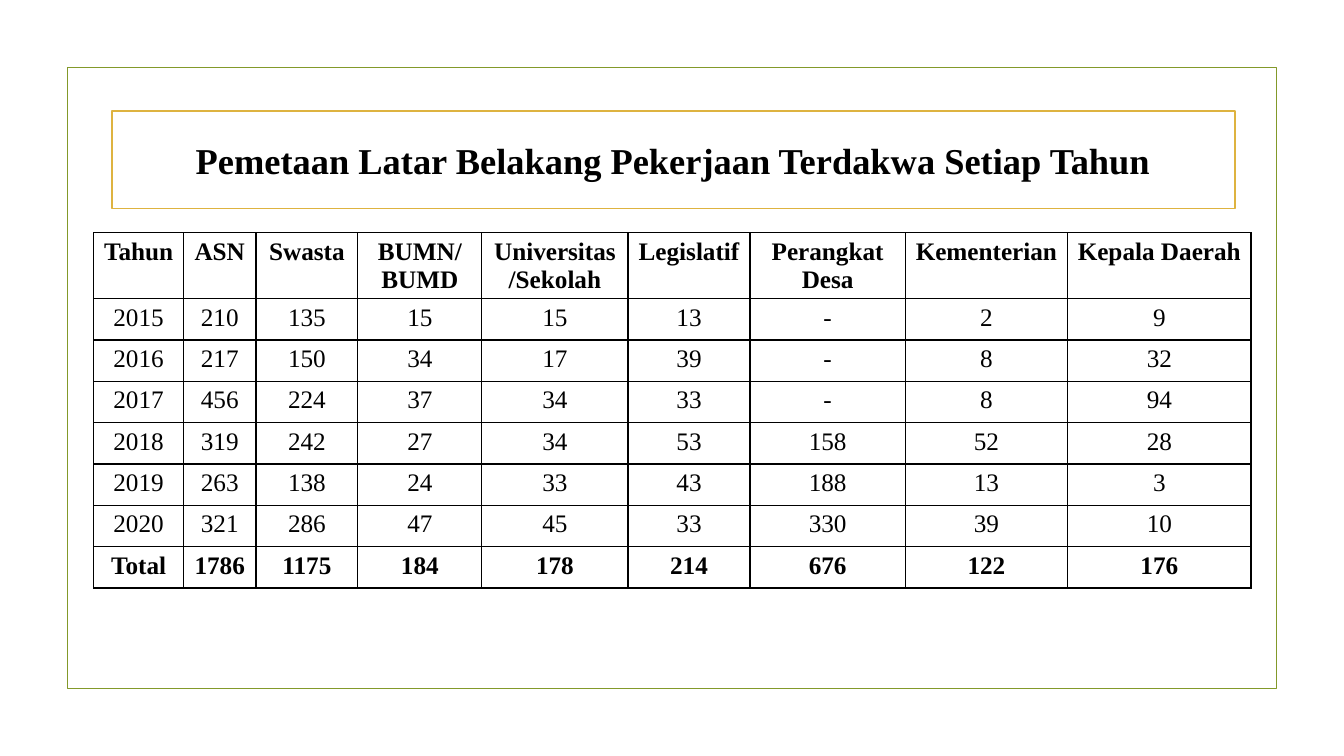
import pptx
import pptx.dml.color
import pptx.enum.shapes
import pptx.enum.text
import pptx.oxml
import pptx.oxml.ns
import pptx.util

TITLE = "Pemetaan Latar Belakang Pekerjaan Terdakwa Setiap Tahun"
HEADERS = ["Tahun", "ASN", "Swasta", "BUMN/BUMD", "Universitas/Sekolah",
           "Legislatif", "Perangkat Desa", "Kementerian", "Kepala Daerah"]
YEARS = [
    (2015, 210, 135, 15, 15, 13, "-", 2, 9),
    (2016, 217, 150, 34, 17, 39, "-", 8, 32),
    (2017, 456, 224, 37, 34, 33, "-", 8, 94),
    (2018, 319, 242, 27, 34, 53, 158, 52, 28),
    (2019, 263, 138, 24, 33, 43, 188, 13, 3),
    (2020, 321, 286, 47, 45, 33, 330, 39, 10),
]
TOTALS = ("Total", 1786, 1175, 184, 178, 214, 676, 122, 176)

COLORS = {"text": "000000", "paper": "FFFFFF", "frame": "83992A", "title": "DEB340"}
FONT = "Times New Roman"
SLIDE_WIDTH, SLIDE_HEIGHT = 13.33, 7.5
FRAME_MARGIN = 0.67
TITLE_AREA = (1.11, 1.1, 11.14, 0.97)
TABLE_LEFT, TABLE_TOP = 0.93, 2.31
COLUMN_WIDTHS = [0.89, 0.72, 1.01, 1.23, 1.45, 1.21, 1.54, 1.61, 1.82]
HEADER_HEIGHT, ROW_HEIGHT = 0.65, 0.41

inches = pptx.util.Inches


def color(name):
    return pptx.dml.color.RGBColor.from_string(COLORS[name])


def outline(shape, name):
    shape.line.color.rgb = color(name)
    shape.line.width = pptx.util.Pt(1.25)


def format_text(paragraph, size, bold):
    paragraph.alignment = pptx.enum.text.PP_ALIGN.CENTER
    paragraph.font.name = FONT
    paragraph.font.size = pptx.util.Pt(size)
    paragraph.font.bold = bold
    paragraph.font.color.rgb = color("text")


def add_cell_borders(cell):
    properties = cell._tc.get_or_add_tcPr()
    for position, side in enumerate(("lnL", "lnR", "lnT", "lnB")):
        border = pptx.oxml.parse_xml(
            f'<a:{side} {pptx.oxml.ns.nsdecls("a")} w="12700"><a:solidFill>'
            f'<a:srgbClr val="{COLORS["text"]}"/></a:solidFill></a:{side}>')
        properties.insert(position, border)


def add_frame(page):
    frame = page.shapes.add_shape(
        pptx.enum.shapes.MSO_SHAPE.RECTANGLE,
        inches(FRAME_MARGIN), inches(FRAME_MARGIN),
        inches(SLIDE_WIDTH - 2 * FRAME_MARGIN), inches(SLIDE_HEIGHT - 2 * FRAME_MARGIN))
    frame.shadow.inherit = False
    frame.fill.background()
    outline(frame, "frame")


def add_title(page):
    title = page.shapes.title
    title.left, title.top, title.width, title.height = map(inches, TITLE_AREA)
    title.fill.solid()
    title.fill.fore_color.rgb = color("paper")
    outline(title, "title")
    title.text_frame.text = TITLE
    title.text_frame.auto_size = pptx.enum.text.MSO_AUTO_SIZE.NONE
    title.text_frame.vertical_anchor = pptx.enum.text.MSO_ANCHOR.MIDDLE
    format_text(title.text_frame.paragraphs[0], 26, True)


def add_defendant_table(page):
    rows = [HEADERS, *YEARS, TOTALS]
    heights = [HEADER_HEIGHT] + [ROW_HEIGHT] * (len(rows) - 1)
    table = page.shapes.add_table(
        len(rows), len(HEADERS), inches(TABLE_LEFT), inches(TABLE_TOP),
        inches(sum(COLUMN_WIDTHS)), inches(sum(heights))).table
    table.horz_banding = False
    for column, width in zip(table.columns, COLUMN_WIDTHS):
        column.width = inches(width)
    for row, height, values in zip(table.rows, heights, rows):
        row.height = inches(height)
        for cell, value in zip(row.cells, values):
            cell.text = str(value)
            cell.fill.solid()
            cell.fill.fore_color.rgb = color("paper")
            add_cell_borders(cell)
            format_text(cell.text_frame.paragraphs[0], 18, values in (HEADERS, TOTALS))


def main():
    deck = pptx.Presentation()
    deck.slide_width, deck.slide_height = inches(SLIDE_WIDTH), inches(SLIDE_HEIGHT)
    page = deck.slides.add_slide(deck.slide_layouts.get_by_name("Title Only"))
    add_frame(page)
    add_title(page)
    add_defendant_table(page)
    deck.save("out.pptx")


if __name__ == "__main__":
    main()
